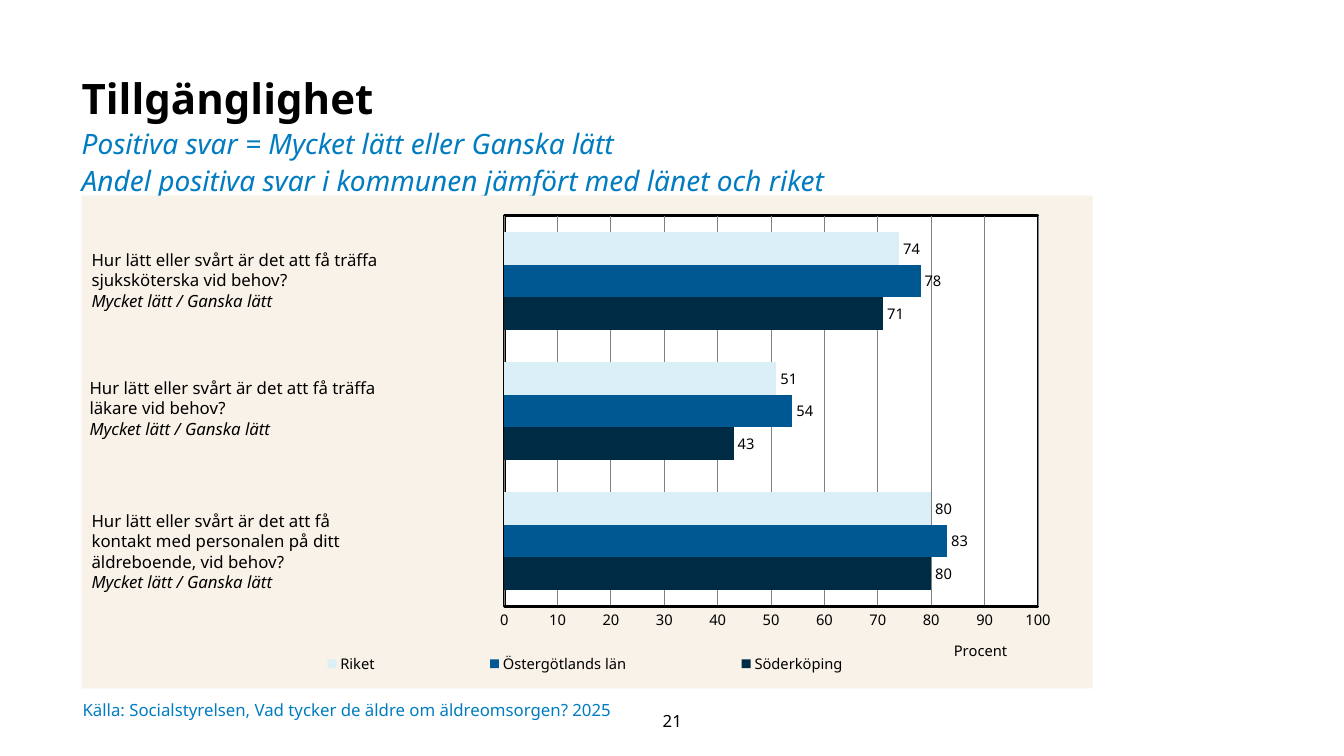
from collections import namedtuple
from dataclasses import dataclass

from lxml import etree
from pptx import Presentation
from pptx.chart.data import CategoryChartData as ChartData
from pptx.dml.color import RGBColor as Color
from pptx.enum.chart import XL_CHART_TYPE as ChartType
from pptx.enum.chart import XL_LABEL_POSITION as LabelPosition
from pptx.enum.chart import XL_LEGEND_POSITION as LegendPosition
from pptx.enum.chart import XL_TICK_MARK as TickMark
from pptx.enum.text import MSO_ANCHOR as Anchor
from pptx.enum.text import MSO_AUTO_SIZE as AutoSize
from pptx.enum.text import PP_ALIGN as Align
from pptx.oxml import parse_xml
from pptx.oxml.ns import nsdecls, qn
from pptx.util import Inches, Pt


@dataclass(frozen=True)
class Theme:
    font: str = "Noto Sans"
    black: str = "000000"
    accent: str = "017CC1"
    panel: str = "F8F2E8"
    plot: str = "FFFFFF"
    grid: str = "808080"
    title: float = 30
    subtitle: float = 20
    body: float = 12
    small: float = 10.5


THEME = Theme()
Box = namedtuple("Box", "left top width height")
COLUMNS, ROWS = 160, 90
SLIDE = Box(0, 0, Inches(13.33), Inches(7.5))
COLUMN, ROW = SLIDE.width / COLUMNS, SLIDE.height / ROWS

TITLE_BOX = Box(9.72, 8.04, 93.24, 15.12)
PANEL_BOX = Box(9.72, 23.28, 120.36, 58.68)
SOURCE_BOX = Box(9.84, 82.08, 70.92, 4.8)
NUMBER_BOX = Box(73.92, 83.4, 12.24, 4.8)

SERIES = [
    ("Söderköping", (80, 43, 71), "002B45"),
    ("Östergötlands län", (83, 54, 78), "005892"),
    ("Riket", (80, 51, 74), "DBF0F6"),
]
NORMAL = dict(size=THEME.body, color=THEME.black)
ITALIC = dict(NORMAL, italic=True)
ANSWER = ("Mycket lätt / Ganska lätt", ITALIC)
TREAT = ("Hur lätt eller svårt är det att få träffa", NORMAL)
QUESTIONS = [
    (Box(0, 5.88, 59.04, 10.56),
     [[TREAT], [("sjuksköterska vid behov?", NORMAL)], [ANSWER]]),
    (Box(-0.24, 21.12, 58.56, 10.92),
     [[TREAT], [("läkare vid behov?", NORMAL)], [ANSWER]]),
    (Box(0, 36.96, 36, 13.08),
     [[("Hur lätt eller svårt är det att få kontakt med personalen "
        "på ditt äldreboende, vid behov?", NORMAL), ANSWER]]),
]


def apply(target, values):
    for name, value in values.items():
        setattr(target, name, value)


def to_emu(box):
    return [int(length * unit) for length, unit in zip(box, (COLUMN, ROW) * 2)]


def format_font(font, size, color, **values):
    apply(font, dict(values, name=THEME.font, size=Pt(size)))
    font.color.rgb = Color.from_string(color)


def fill_solid(fill, color):
    fill.solid()
    fill.fore_color.rgb = Color.from_string(color)


def write_paragraphs(frame, paragraphs, **values):
    for index, lines in enumerate(paragraphs):
        paragraph = frame.paragraphs[0] if index == 0 else frame.add_paragraph()
        apply(paragraph, values)
        for line_index, (text, style) in enumerate(lines):
            if line_index:
                paragraph.add_line_break()
            run = paragraph.add_run()
            run.text = text
            format_font(run.font, **style)


def add_text(slide, box, paragraphs, frame_values, **values):
    frame = slide.shapes.add_textbox(*to_emu(box)).text_frame
    apply(frame, dict(frame_values, word_wrap=True))
    write_paragraphs(frame, paragraphs, **values)


def add_title(slide, box):
    title = slide.shapes.title
    apply(title, dict(zip(Box._fields, to_emu(box))))
    frame = title.text_frame
    apply(frame, dict(
        margin_left=0, margin_top=0, margin_right=Inches(0.1),
        margin_bottom=Inches(0.05), vertical_anchor=Anchor.TOP,
        auto_size=AutoSize.NONE, word_wrap=True))
    subtitle = dict(size=THEME.subtitle, color=THEME.accent, bold=False, italic=True)
    write_paragraphs(frame, [[
        ("Tillgänglighet", dict(size=THEME.title, color=THEME.black, bold=True)),
        ("Positiva svar = Mycket lätt eller Ganska lätt", subtitle),
        ("Andel positiva svar i kommunen jämfört med länet och riket", subtitle),
    ]], alignment=Align.LEFT, line_spacing=1.1)


def set_layout(element, after, target=None, **shares):
    for old in element.findall(qn("c:layout")):
        element.remove(old)
    layout = etree.Element(qn("c:layout"))
    manual = etree.SubElement(layout, qn("c:manualLayout"))
    settings = {"layoutTarget": target} if target else {}
    settings.update(xMode="edge", yMode="edge", **shares)
    for name, value in settings.items():
        etree.SubElement(manual, qn(f"c:{name}")).set("val", str(value))
    previous = element.find(qn(after)) if after else None
    element.insert(0 if previous is None else element.index(previous) + 1, layout)


def format_plot_area(chart):
    area = chart.plots[0]._element.getparent()
    set_layout(area, None, "inner", x=0.418, y=0.041, w=0.528, h=0.792)
    for owner, color, line in (
            (area, THEME.plot, f'<a:solidFill><a:srgbClr val="{THEME.black}"/></a:solidFill>'),
            (area.getparent().getparent(), THEME.panel, "<a:noFill/>")):
        properties = parse_xml(
            f'<c:spPr {nsdecls("c", "a")}><a:solidFill><a:srgbClr val="{color}"/>'
            f'</a:solidFill><a:ln w="{Pt(2)}">{line}</a:ln></c:spPr>')
        if owner is area:
            owner.append(properties)
        else:
            owner.find(qn("c:chart")).addnext(properties)


def format_value_axis(axis):
    apply(axis, dict(
        minimum_scale=0, maximum_scale=100, major_unit=10, has_major_gridlines=True,
        major_tick_mark=TickMark.NONE, minor_tick_mark=TickMark.NONE))
    format_font(axis.tick_labels.font, THEME.small, THEME.black)
    for line, color, width in ((axis.format.line, THEME.black, 2),
                               (axis.major_gridlines.format.line, THEME.grid, 0.75)):
        fill_solid(line.fill, color)
        line.width = Pt(width)
    title = axis.axis_title
    write_paragraphs(title.text_frame, [
        [("Procent", dict(size=THEME.small, color=THEME.black, bold=False))]])
    set_layout(title._element, "c:tx", x=0.86, y=0.895)


def add_chart(slide, box):
    data = ChartData(number_format="0")
    data.categories = ["1", "2", "3"]
    for name, values, _ in SERIES:
        data.add_series(name, values)
    chart = slide.shapes.add_chart(ChartType.BAR_CLUSTERED, *to_emu(box), data).chart
    apply(chart, dict(has_title=False, has_legend=True))
    format_font(chart.font, THEME.body, THEME.black)
    plot = chart.plots[0]
    apply(plot, dict(gap_width=100, overlap=0, vary_by_categories=False))
    for series, (_, _, color) in zip(plot.series, SERIES):
        fill_solid(series.format.fill, color)
        labels = series.data_labels
        apply(labels, dict(show_value=True, position=LabelPosition.OUTSIDE_END))
        format_font(labels.font, THEME.small, THEME.black)
    chart.category_axis.visible = False
    format_value_axis(chart.value_axis)
    legend = chart.legend
    apply(legend, dict(position=LegendPosition.BOTTOM, include_in_layout=False))
    format_font(legend.font, THEME.small, THEME.black)
    set_layout(legend._element, "c:legendPos", x=0.134, y=0.92, w=0.728, h=0.06)
    format_plot_area(chart)


def add_questions(slide, panel):
    for offset, paragraphs in QUESTIONS:
        box = offset._replace(left=panel.left + offset.left, top=panel.top + offset.top)
        add_text(slide, box, paragraphs, dict(auto_size=AutoSize.SHAPE_TO_FIT_TEXT))


def add_footer(slide, source_box, number_box):
    margins = dict.fromkeys(
        ("margin_left", "margin_top", "margin_right", "margin_bottom"), 0)
    middle = dict(vertical_anchor=Anchor.MIDDLE)
    source = "Källa: Socialstyrelsen, Vad tycker de äldre om äldreomsorgen? 2025"
    add_text(slide, source_box, [[(source, dict(NORMAL, color=THEME.accent))]],
             dict(margins, **middle))
    add_text(slide, number_box, [[("21", NORMAL)]], middle, alignment=Align.CENTER)


def main():
    presentation = Presentation()
    apply(presentation, dict(slide_width=SLIDE.width, slide_height=SLIDE.height))
    slide = presentation.slides.add_slide(presentation.slide_layouts[5])
    add_title(slide, TITLE_BOX)
    add_chart(slide, PANEL_BOX)
    add_questions(slide, PANEL_BOX)
    add_footer(slide, SOURCE_BOX, NUMBER_BOX)
    presentation.save("out.pptx")


if __name__ == "__main__":
    main()
